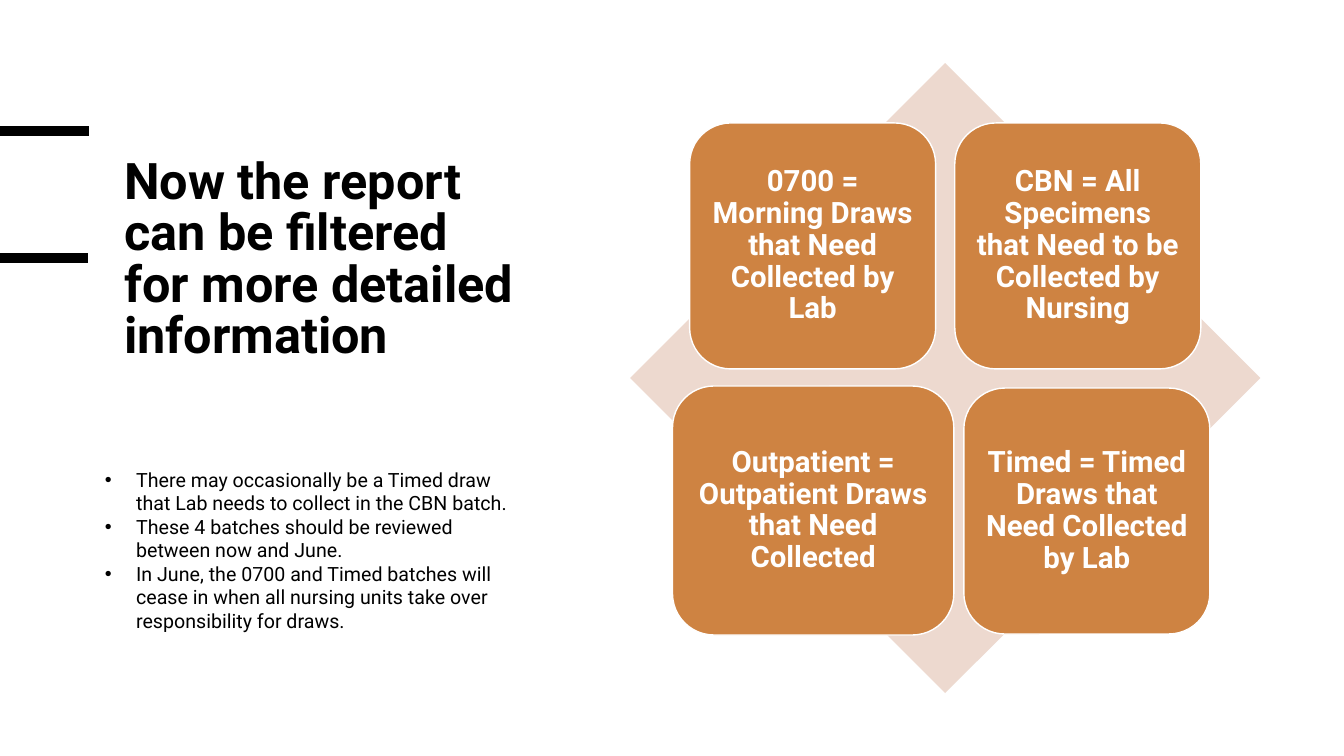
import dataclasses

import lxml.etree
import pptx
import pptx.dml.color
import pptx.enum.shapes
import pptx.enum.text
import pptx.oxml.ns
import pptx.util

ALIGN = pptx.enum.text.PP_ALIGN
ANCHOR = pptx.enum.text.MSO_ANCHOR
SHAPE = pptx.enum.shapes.MSO_SHAPE


@dataclasses.dataclass(frozen=True)
class Theme:
    font: str = "Roboto"
    ink: str = "000000"
    paper: str = "FFFFFF"
    tile: str = "CE8342"
    diamond: str = "EDD9CF"
    title_size: float = 36
    tile_size: float = 21
    list_size: float = 14
    bar_width: float = 6.75
    outline_width: float = 1


@dataclasses.dataclass(frozen=True)
class Area:
    """Place in grid columns and rows."""
    column: float
    row: float
    columns: float
    rows: float


@dataclasses.dataclass(frozen=True)
class Tile:
    text: str
    area: Area


@dataclasses.dataclass(frozen=True)
class Bar:
    row: float
    columns: float


THEME = Theme()
CELL = 0.25  # inches per grid column and row
TILE_SIDE = 9.76

TITLE = "Now the report can be filtered for more detailed information"
TITLE_AREA = Area(4.52, 6.08, 16.48, 11.68)
NOTES = [
    "There may occasionally be a Timed draw that Lab needs to collect in the CBN batch.",
    "These 4 batches should be reviewed between now and June.",
    "In June, the 0700 and Timed batches will cease in when all nursing units "
    "take over responsibility for draws.",
]
NOTES_AREA = Area(3.76, 18.36, 17.28, 9.16)
BARS = [Bar(5.2, 3.52), Bar(10.24, 3.48)]
DIAMOND_AREA = Area(25, 2.5, 25, 25)
TILES = [
    Tile("0700 = Morning Draws that Need Collected by Lab",
         Area(27.36, 4.88, TILE_SIDE, TILE_SIDE)),
    Tile("CBN = All Specimens that Need to be Collected by Nursing",
         Area(37.88, 4.88, TILE_SIDE, TILE_SIDE)),
    Tile("Outpatient = Outpatient Draws that Need Collected",
         Area(26.68, 15.32, 11.16, 9.88)),
    Tile("Timed = Timed Draws that Need Collected by Lab",
         Area(38.24, 15.4, TILE_SIDE, TILE_SIDE)),
]


def grid(cells: float) -> int:
    return pptx.util.Inches(cells * CELL)


def colour(value: str) -> pptx.dml.color.RGBColor:
    return pptx.dml.color.RGBColor.from_string(value)


def place(box, area: Area) -> None:
    box.left, box.top = grid(area.column), grid(area.row)
    box.width, box.height = grid(area.columns), grid(area.rows)


def format_text(frame, size: float, ink: str, bold: bool, align,
                spacing: float, anchor) -> None:
    frame.word_wrap = True
    frame.auto_size = pptx.enum.text.MSO_AUTO_SIZE.NONE
    frame.vertical_anchor = anchor
    for para in frame.paragraphs:
        para.alignment = align
        para.line_spacing = spacing
        para.space_before = para.space_after = pptx.util.Pt(0)
        for span in para.runs:
            span.font.name = THEME.font
            span.font.size = pptx.util.Pt(size)
            span.font.bold = bold
            span.font.color.rgb = colour(ink)


def add_bullet(para) -> None:
    properties = para._p.get_or_add_pPr()
    indent = pptx.util.Inches(0.31)
    properties.set("marL", str(indent))
    properties.set("indent", str(-indent))
    for tag, name, value in [("a:buFont", "typeface", "Arial"),
                             ("a:buChar", "char", "•")]:
        lxml.etree.SubElement(properties, pptx.oxml.ns.qn(tag)).set(name, value)


def add_bar(page, bar: Bar) -> None:
    line = page.shapes.add_connector(
        pptx.enum.shapes.MSO_CONNECTOR.STRAIGHT,
        0, grid(bar.row), grid(bar.columns), grid(bar.row))
    line.line.color.rgb = colour(THEME.ink)
    line.line.width = pptx.util.Pt(THEME.bar_width)
    lxml.etree.SubElement(line._element.spPr, pptx.oxml.ns.qn("a:effectLst"))


def add_filled(page, kind, area: Area, fill: str):
    box = page.shapes.add_shape(kind, 0, 0, 0, 0)
    place(box, area)
    box.shadow.inherit = False
    box.fill.solid()
    box.fill.fore_color.rgb = colour(fill)
    box.line.fill.background()
    return box


def add_tile(page, tile: Tile) -> None:
    box = add_filled(page, SHAPE.ROUNDED_RECTANGLE, tile.area, THEME.tile)
    box.line.color.rgb = colour(THEME.paper)
    box.line.width = pptx.util.Pt(THEME.outline_width)
    frame = box.text_frame
    frame.text = tile.text
    frame.margin_left = frame.margin_right = pptx.util.Inches(0.09)
    frame.margin_top = frame.margin_bottom = pptx.util.Inches(0.09)
    format_text(frame, THEME.tile_size, THEME.paper, True,
                ALIGN.CENTER, 0.9, ANCHOR.MIDDLE)


def main() -> None:
    deck = pptx.Presentation()
    deck.slide_width = pptx.util.Inches(13.33)
    deck.slide_height = pptx.util.Inches(7.5)
    page = deck.slides.add_slide(deck.slide_layouts[1])

    # Title between the two bars
    title = page.shapes.title
    place(title, TITLE_AREA)
    title.text_frame.text = TITLE
    format_text(title.text_frame, THEME.title_size, THEME.ink, True,
                ALIGN.LEFT, 0.85, ANCHOR.TOP)
    for bar in BARS:
        add_bar(page, bar)

    # Bulleted notes
    notes = page.placeholders[1]
    place(notes, NOTES_AREA)
    notes.text_frame.text = "\n".join(NOTES)
    format_text(notes.text_frame, THEME.list_size, THEME.ink, False,
                ALIGN.LEFT, 1.0, ANCHOR.TOP)
    for para in notes.text_frame.paragraphs:
        add_bullet(para)

    # Four batches over a diamond
    add_filled(page, SHAPE.DIAMOND, DIAMOND_AREA, THEME.diamond)
    for tile in TILES:
        add_tile(page, tile)

    deck.save("out.pptx")


if __name__ == "__main__":
    main()
